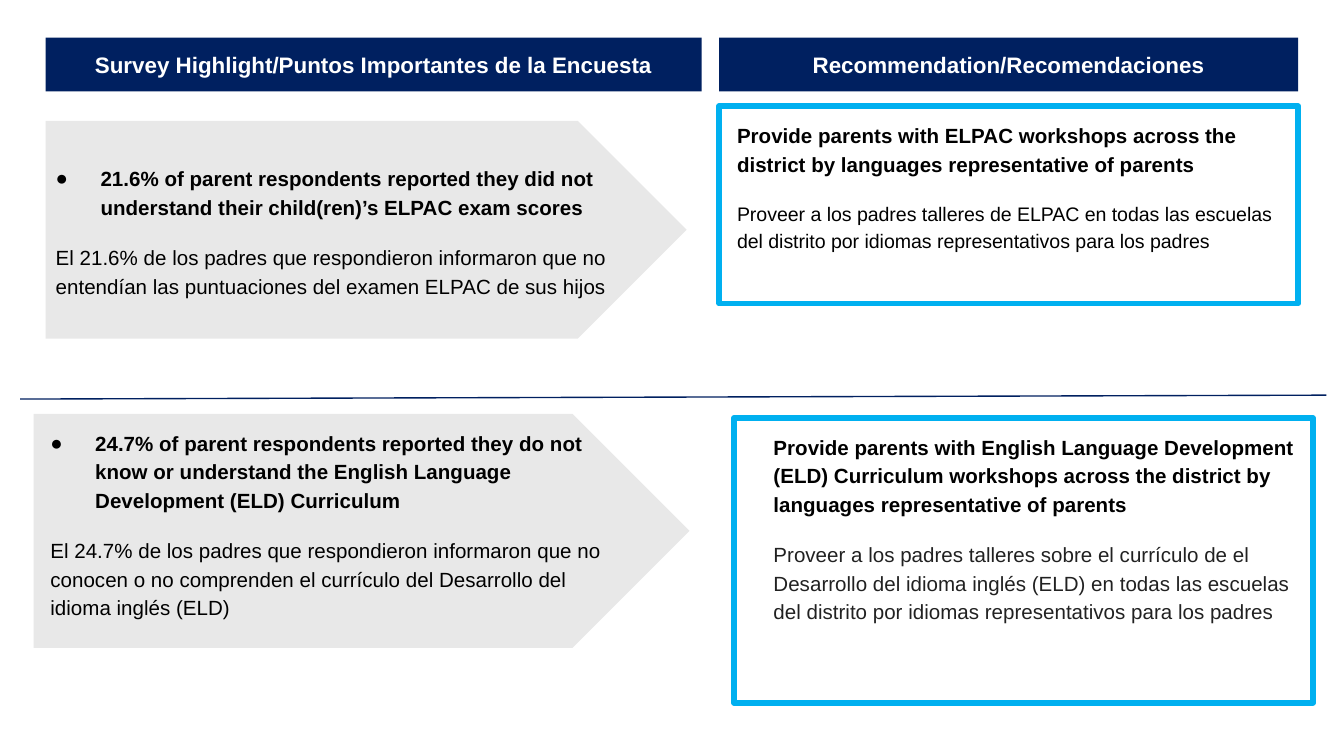
from lxml import etree
from pptx import Presentation
from pptx.dml.color import RGBColor as RGB
from pptx.enum.shapes import MSO_CONNECTOR as Connector, MSO_SHAPE as Shape
from pptx.enum.text import MSO_ANCHOR as Anchor, PP_ALIGN as Align
from pptx.oxml.ns import qn
from pptx.util import Pt

COLORS = {
    "navy": "002060",
    "sky": "00B0F0",
    "gray": "E8E8E8",
    "black": "000000",
    "charcoal": "212121",
    "white": "FFFFFF",
}
FRAME_FORMAT = {
    "word_wrap": True,
    "margin_left": Pt(7.2),
    "margin_right": Pt(7.2),
    "margin_top": Pt(7.2),
    "margin_bottom": Pt(7.2),
}
PARAGRAPH_FORMAT = {"line_spacing": 1.15, "space_before": Pt(12), "alignment": Align.LEFT}
HEADER_FORMAT = {"alignment": Align.CENTER}


def add_panel(kind, box, fill=None, line=None):
    panel = slide.shapes.add_shape(kind, *map(Pt, box))
    panel.shadow.inherit = False
    if fill:
        panel.fill.solid()
        panel.fill.fore_color.rgb = RGB.from_string(COLORS[fill])
    else:
        panel.fill.background()
    if line:
        panel.line.color.rgb = RGB.from_string(COLORS[line])
        panel.line.width = Pt(3)
    else:
        panel.line.fill.background()
    return panel


def write_paragraph(paragraph, text, layout, size, color, bold):
    for name, value in layout.items():
        setattr(paragraph, name, value)
    run = paragraph.add_run()
    run.text = text
    font_format = {"name": "Arial", "size": Pt(size), "bold": bold}
    for name, value in font_format.items():
        setattr(run.font, name, value)
    run.font.color.rgb = RGB.from_string(COLORS[color])


deck = Presentation()
deck.slide_width, deck.slide_height = Pt(720), Pt(405)
slide = deck.slides.add_slide(deck.slide_layouts[6])

for arrow_box in [(18, 221.8, 351.4, 125.3), (24.5, 64.8, 343.4, 116.6)]:
    add_panel(Shape.PENTAGON, arrow_box, fill="gray")

headers = [
    ("Survey Highlight/Puntos Importantes de la Encuesta", 24.5, 351.4),
    ("Recommendation/Recomendaciones", 385.2, 310.3),
]
for title, left, width in headers:
    header = add_panel(Shape.RECTANGLE, (left, 20.2, width, 28.8), fill="navy")
    for name, value in FRAME_FORMAT.items():
        setattr(header.text_frame, name, value)
    header.text_frame.vertical_anchor = Anchor.MIDDLE
    write_paragraph(header.text_frame.paragraphs[0], title, HEADER_FORMAT, 12, "white", True)

statements = [
    ((10.8, 79.9, 331.2, 116.6), True, 11, "black",
     "21.6% of parent respondents reported they did not understand their child(ren)’s ELPAC exam scores",
     "El 21.6% de los padres que respondieron informaron que no entendían las puntuaciones del examen ELPAC de sus hijos"),
    ((375.8, 56.9, 319.7, 161.3), False, 10.5, "black",
     "Provide parents with ELPAC workshops across the district by languages representative of parents",
     "Proveer a los padres talleres de ELPAC en todas las escuelas del distrito por idiomas representativos para los padres"),
    ((7.9, 221.8, 334.8, 139.7), True, 11, "black",
     "24.7% of parent respondents reported they do not know or understand the English Language Development (ELD) Curriculum",
     "El 24.7% de los padres que respondieron informaron que no conocen o no comprenden el currículo del Desarrollo del idioma inglés (ELD)"),
    ((395.3, 223.9, 313.2, 136.1), False, 11, "charcoal",
     "Provide parents with English Language Development (ELD) Curriculum workshops across the district by languages representative of parents",
     "Proveer a los padres talleres sobre el currículo de el Desarrollo del idioma inglés (ELD) en todas las escuelas del distrito por idiomas representativos para los padres"),
]
for box, bulleted, spanish_size, spanish_color, english, spanish in statements:
    statement = slide.shapes.add_textbox(*map(Pt, box)).text_frame
    for name, value in FRAME_FORMAT.items():
        setattr(statement, name, value)
    english_line, spanish_line = statement.paragraphs[0], statement.add_paragraph()
    write_paragraph(english_line, english, PARAGRAPH_FORMAT, 11, "black", True)
    write_paragraph(spanish_line, spanish, PARAGRAPH_FORMAT, spanish_size, spanish_color, False)
    for line in (english_line, spanish_line):
        properties = line._p.get_or_add_pPr()
        has_bullet = bulleted and line is english_line
        properties.set("marL", str(Pt(36 if has_bullet else 12)))
        properties.set("indent", str(Pt(-24 if has_bullet else 0)))
        if has_bullet:
            bullet_color = etree.SubElement(properties, qn("a:buClr"))
            etree.SubElement(bullet_color, qn("a:srgbClr"), val=COLORS["black"])
            etree.SubElement(properties, qn("a:buFont"), typeface="Arial")
            etree.SubElement(properties, qn("a:buChar"), char="●")
        else:
            etree.SubElement(properties, qn("a:buNone"))

divider = slide.shapes.add_connector(Connector.STRAIGHT, Pt(10.8), Pt(213.8), Pt(710.6), Pt(211.7))
divider.line.color.rgb = RGB.from_string(COLORS["navy"])
divider.line.width = Pt(0.75)
etree.SubElement(divider._element.spPr, qn("a:effectLst"))

for outline_box in [(385.2, 56.9, 310.3, 105.8), (393.1, 223.9, 310.3, 152.6)]:
    add_panel(Shape.RECTANGLE, outline_box, line="sky")

deck.save("out.pptx")
